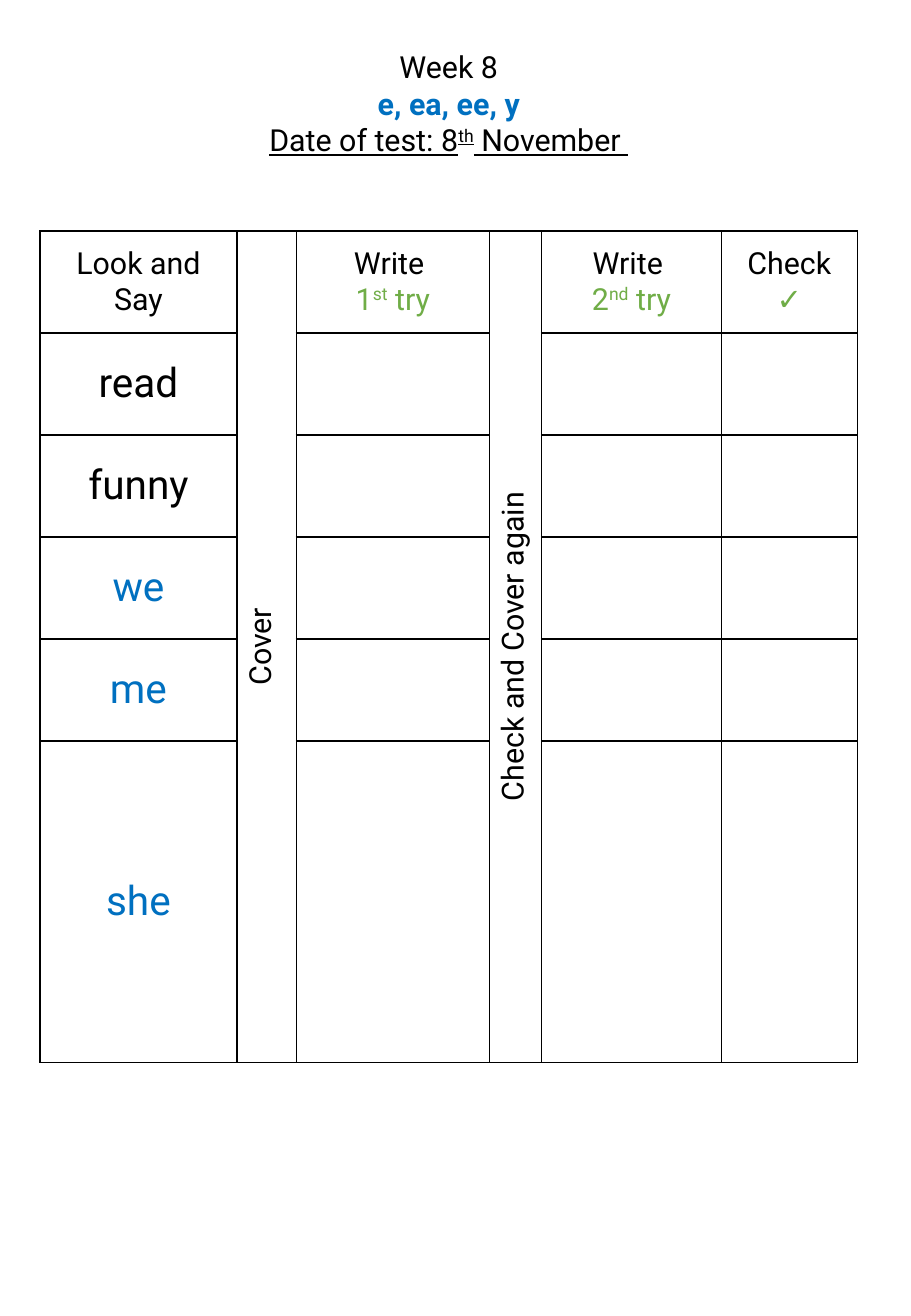
from dataclasses import dataclass

from lxml.etree import SubElement
from pptx import Presentation
from pptx.dml.color import RGBColor
from pptx.enum.text import MSO_ANCHOR, MSO_AUTO_SIZE, PP_ALIGN
from pptx.oxml.ns import qn
from pptx.util import Inches, Pt


@dataclass(frozen=True)
class Theme:
    font: str = "Roboto"
    black: str = "000000"
    white: str = "FFFFFF"
    blue: str = "0070C0"
    green: str = "70AD47"
    body_size: int = 18
    word_size: int = 24
    border_width: int = 1


THEME = Theme()


@dataclass(frozen=True)
class Span:
    text: str
    color: str = THEME.black
    size: int = THEME.body_size
    bold: bool = False
    underline: bool = False
    raised: bool = False


Lines = list[list[Span]]


@dataclass(frozen=True)
class Column:
    width: float
    heading: Lines
    merged: bool = False


def write_lines(frame, lines: Lines) -> None:
    """Fill a text frame with centred paragraphs, run by run."""
    for index, line in enumerate(lines):
        para = frame.paragraphs[0] if index == 0 else frame.add_paragraph()
        para.alignment = PP_ALIGN.CENTER
        for span in line:
            run = para.add_run()
            run.text = span.text
            run.font.name = THEME.font
            run.font.size = Pt(span.size)
            run.font.bold = span.bold
            run.font.underline = span.underline
            run.font.color.rgb = RGBColor.from_string(span.color)
            if span.raised:
                run.font._element.set("baseline", "30000")


def format_cell(cell) -> None:
    """Give a cell thin black borders and a white fill."""
    cell.vertical_anchor = MSO_ANCHOR.MIDDLE
    properties = cell._tc.get_or_add_tcPr()
    for side in ("a:lnL", "a:lnR", "a:lnT", "a:lnB"):
        line = SubElement(properties, qn(side), w=str(Pt(THEME.border_width)))
        line_fill = SubElement(line, qn("a:solidFill"))
        SubElement(line_fill, qn("a:srgbClr"), val=THEME.black)
    cell.fill.solid()
    cell.fill.fore_color.rgb = RGBColor.from_string(THEME.white)


def try_heading(number: str, ending: str) -> Lines:
    return [
        [Span("Write ")],
        [
            Span(number, THEME.green),
            Span(ending, THEME.green, raised=True),
            Span(" try", THEME.green),
        ],
    ]


# Content
TITLE: Lines = [
    [Span("Week 8")],
    [Span("e, ea, ee, y", THEME.blue, bold=True)],
    [
        Span("Date of test: 8", underline=True),
        Span("th", underline=True, raised=True),
        Span(" November ", underline=True),
    ],
]
COLUMNS = [
    Column(1.62, [[Span("Look and Say")]]),
    Column(0.49, [[Span("Cover")]], merged=True),
    Column(1.59, try_heading("1", "st")),
    Column(0.43, [[Span("Check and Cover again")]], merged=True),
    Column(1.48, try_heading("2", "nd")),
    Column(1.12, [[Span("Check")], [Span("✓", THEME.green)]]),
]
WORDS = [
    Span("read", size=THEME.word_size),
    Span("funny", size=THEME.word_size),
    Span("we", THEME.blue, THEME.word_size),
    Span("me", THEME.blue, THEME.word_size),
    Span("she", THEME.blue, THEME.word_size),
]
LEFT, WIDTH = 0.33, 6.73
TABLE_TOP, ROW_HEIGHT = 1.9, 0.84


def add_title(page) -> None:
    box = page.shapes.title
    box.left, box.top = Inches(LEFT), Inches(0.35)
    box.width, box.height = Inches(WIDTH), Inches(1.01)
    frame = box.text_frame
    frame.word_wrap = True
    frame.auto_size = MSO_AUTO_SIZE.SHAPE_TO_FIT_TEXT
    frame.vertical_anchor = MSO_ANCHOR.TOP
    write_lines(frame, TITLE)


def add_spelling_table(page) -> None:
    row_count = len(WORDS) + 1
    table = page.shapes.add_table(
        row_count, len(COLUMNS), Inches(LEFT), Inches(TABLE_TOP),
        Inches(WIDTH), Inches(ROW_HEIGHT * row_count),
    ).table
    table.first_row = table.horz_banding = False
    for row in table.rows:
        row.height = Inches(ROW_HEIGHT)
        for cell in row.cells:
            format_cell(cell)

    # Headings, with the upright columns merged from top to bottom
    for index, column in enumerate(COLUMNS):
        table.columns[index].width = Inches(column.width)
        heading = table.cell(0, index)
        write_lines(heading.text_frame, column.heading)
        if column.merged:
            heading.merge(table.cell(row_count - 1, index))
            heading._tc.get_or_add_tcPr().set("vert", "vert270")

    # Spelling words
    for row_index, word in enumerate(WORDS, start=1):
        write_lines(table.cell(row_index, 0).text_frame, [[word]])


def main() -> None:
    deck = Presentation()
    deck.slide_width, deck.slide_height = Inches(7.5), Inches(10.83)
    page = deck.slides.add_slide(deck.slide_layouts[5])
    add_title(page)
    add_spelling_table(page)
    deck.save("out.pptx")


if __name__ == "__main__":
    main()
